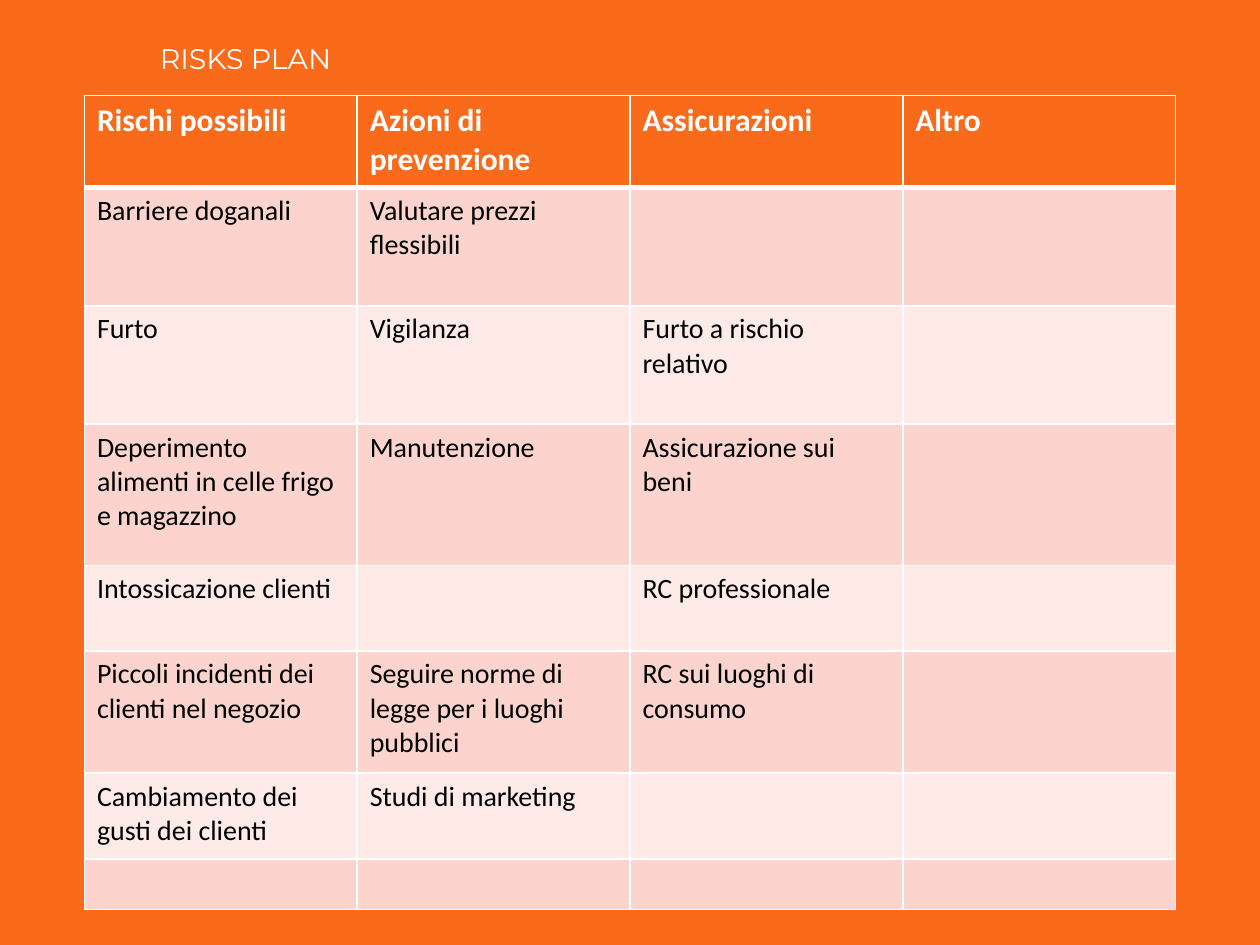
import dataclasses

import lxml.etree
import pptx
import pptx.dml.color
import pptx.enum.text
import pptx.oxml.ns
import pptx.util


@dataclasses.dataclass(frozen=True)
class Theme:
    back: str = "F96A1B"
    light: str = "FFFFFF"
    dark: str = "000402"
    bands: tuple = ("FDD4CD", "FEEBE8")
    title_font: str = "Montserrat"
    body_font: str = "Calibri"
    title_size: float = 16.2
    head_size: float = 18
    body_size: float = 16
    rule: float = 1
    head_rule: float = 3


def paint(fill, color):
    fill.solid()
    fill.fore_color.rgb = pptx.dml.color.RGBColor.from_string(color)


def write(frame, text, *, font, size, color, bold=False):
    run = frame.paragraphs[0].add_run()
    run.text = text
    run.font.name = font
    run.font.size = pptx.util.Pt(size)
    run.font.bold = bold
    run.font.color.rgb = pptx.dml.color.RGBColor.from_string(color)


def edge(cell, color, **widths):
    """Add cell borders; keyword names are L, R, T and B, in points."""
    props = cell._tc.get_or_add_tcPr()
    qn = pptx.oxml.ns.qn
    for spot, (side, width) in enumerate(widths.items()):
        line = lxml.etree.Element(qn(f"a:ln{side}"), w=str(pptx.util.Pt(width)))
        fill = lxml.etree.SubElement(line, qn("a:solidFill"))
        lxml.etree.SubElement(fill, qn("a:srgbClr"), val=color)
        props.insert(spot, line)


class Deck:
    def __init__(self, theme, width, height):
        self.theme = theme
        self.file = pptx.Presentation()
        self.file.slide_width = pptx.util.Inches(width)
        self.file.slide_height = pptx.util.Inches(height)
        self.slide = self.file.slides.add_slide(self.file.slide_layouts[6])
        paint(self.slide.background.fill, theme.back)

    def place(self, left, top, width, height):
        """Turn shares of the slide into lengths."""
        wide, high = self.file.slide_width, self.file.slide_height
        return [round(part * full) for part, full in
                zip((left, top, width, height), (wide, high, wide, high))]

    def title(self, text, *box):
        frame = self.slide.shapes.add_textbox(*self.place(*box)).text_frame
        frame.word_wrap = True
        frame.margin_bottom = 0
        frame.vertical_anchor = pptx.enum.text.MSO_ANCHOR.BOTTOM
        look = self.theme
        write(frame, text, font=look.title_font, size=look.title_size,
              color=look.light)

    def table(self, rows, parts, *box):
        """Draw a table whose row heights follow the given parts."""
        left, top, width, height = self.place(*box)
        count = len(rows[0])
        grid = self.slide.shapes.add_table(
            len(rows), count, left, top, width, height).table
        for col in grid.columns:
            col.width = width // count
        for row, part in zip(grid.rows, parts):
            row.height = round(height * part / sum(parts))
        for r, row in enumerate(rows):
            for c, text in enumerate(row):
                self.cell(grid.cell(r, c), text, r)

    def cell(self, cell, text, row):
        look = self.theme
        head = row == 0
        paint(cell.fill, look.back if head else look.bands[(row - 1) % 2])
        write(cell.text_frame, text, font=look.body_font, bold=head,
              size=look.head_size if head else look.body_size,
              color=look.light if head else look.dark)
        edge(cell, look.light, L=look.rule, R=look.rule,
             T=look.head_rule if row == 1 else look.rule,
             B=look.head_rule if head else look.rule)

    def save(self):
        self.file.save("out.pptx")


RISKS = [
    ("Rischi possibili", "Azioni di prevenzione", "Assicurazioni", "Altro"),
    ("Barriere doganali", "Valutare prezzi flessibili", "", ""),
    ("Furto", "Vigilanza", "Furto a rischio relativo", ""),
    ("Deperimento alimenti in celle frigo e magazzino", "Manutenzione",
     "Assicurazione sui beni", ""),
    ("Intossicazione clienti", "", "RC professionale", ""),
    ("Piccoli incidenti dei clienti nel negozio",
     "Seguire norme di legge per i luoghi pubblici",
     "RC sui luoghi di consumo", ""),
    ("Cambiamento dei gusti dei clienti", "Studi di marketing", "", ""),
    ("", "", "", ""),
]
ROWS = (0.73, 0.94, 0.94, 1.12, 0.68, 0.97, 0.68, 0.39)


def main():
    deck = Deck(Theme(), 10, 7.5)
    # Heading
    deck.title("RISKS PLAN", 0.117, 0, 0.227, 0.08)
    # Risk table, centred across the slide
    side = 0.067
    deck.table(RISKS, ROWS, side, 0.101, 1 - 2 * side, 0.86)
    deck.save()


if __name__ == "__main__":
    main()
